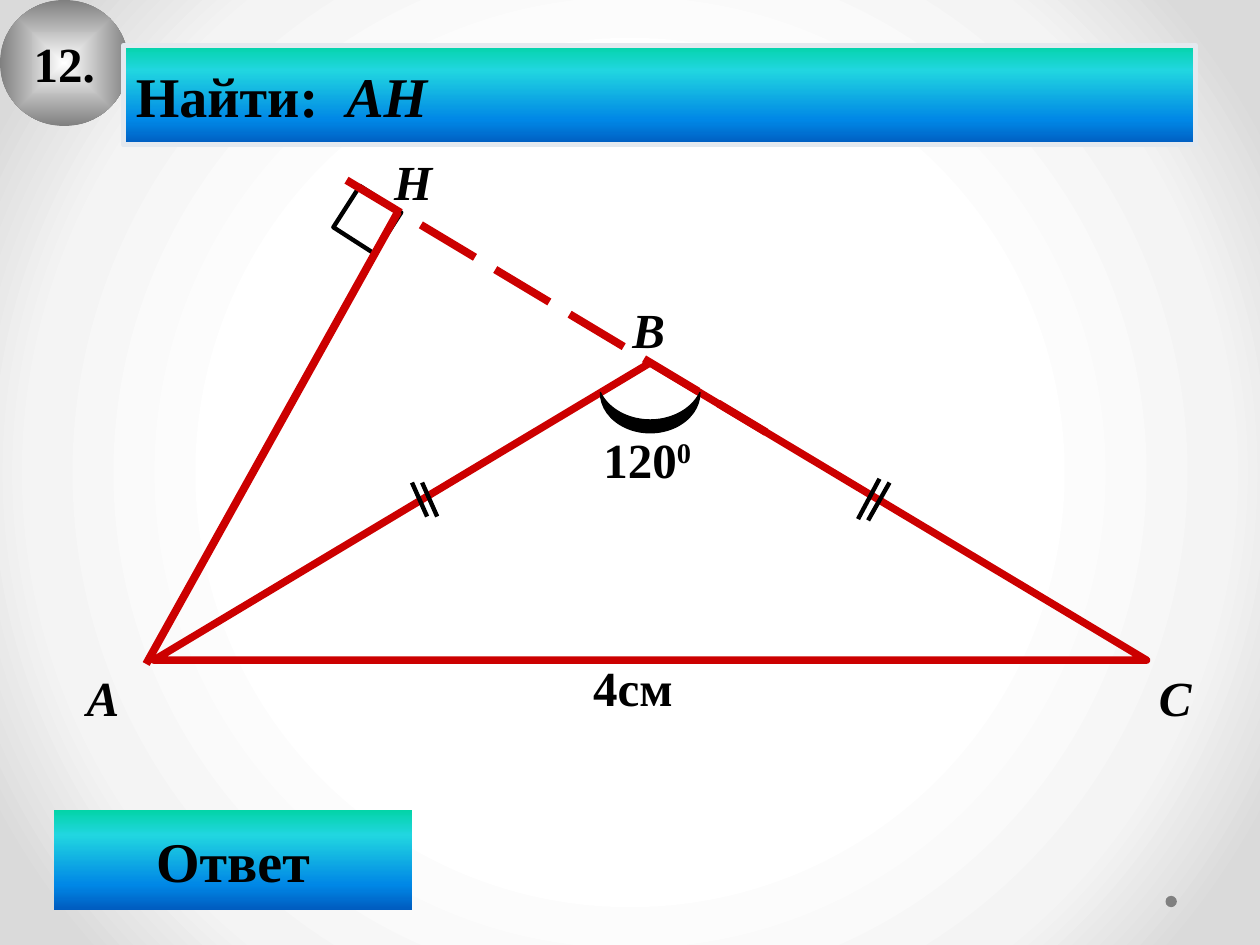
"""Builds a geometry task slide: find the height AH of an isosceles triangle."""
from typing import NamedTuple

from lxml.etree import SubElement
from pptx import Presentation
from pptx.dml.color import RGBColor
from pptx.enum.dml import MSO_LINE
from pptx.enum.shapes import MSO_CONNECTOR, MSO_SHAPE
from pptx.enum.text import MSO_ANCHOR, MSO_AUTO_SIZE, PP_ALIGN
from pptx.oxml.ns import qn
from pptx.util import Inches, Pt

COLORS = {
    "ink": "000000",
    "side": "CC0000",
    "border": "E4E9EF",
    "dot": "808080",
}
OCEAN = ((0, "03D4A8"), (25, "21D6E0"), (75, "0087E6"), (100, "005CBF"))
SILVER = ((0, "FFFFFF"), (100, "808080"))
PAPER = ((50, "FFFFFF"), (76, "F4F4F4"), (92, "DADADA"))
FONT = "Times New Roman"


class Box(NamedTuple):
    left: float
    top: float
    width: float
    height: float


class Piece(NamedTuple):
    text: str
    italic: bool = False
    raised: bool = False


class Label(NamedTuple):
    box: Box
    pieces: tuple[Piece, ...]
    wrap: bool = False


class Segment(NamedTuple):
    start: tuple[float, float]
    end: tuple[float, float]
    color: str = "ink"
    weight: float = 2.5
    dashed: bool = False


LABELS = (
    Label(Box(0.59, 5.25, 0.46, 0.57), (Piece("А", True),)),
    Label(Box(4.92, 2.33, 0.46, 0.57), (Piece("В", True),)),
    Label(Box(9.1, 5.25, 0.46, 0.57), (Piece("С", True),)),
    Label(Box(3.03, 1.15, 0.5, 0.57), (Piece("H", True),)),
    Label(Box(4.61, 5.17, 1.42, 0.57), (Piece("4см"),), True),
    Label(Box(4.69, 3.36, 0.92, 0.57), (Piece("120"), Piece("0", raised=True))),
)
HEIGHT = Segment((3.16, 1.68), (1.16, 5.27), "side", 4.5)
EXTENSION = Segment((2.75, 1.43), (6.08, 3.43), "side", 4.5, True)
TICKS = (
    Segment((3.27, 3.83), (3.39, 4.1)),
    Segment((3.35, 3.83), (3.47, 4.1)),
    Segment((6.98, 3.8), (6.81, 4.12)),
    Segment((7.06, 3.83), (6.89, 4.13)),
)


def rgb(name: str) -> RGBColor:
    """Return the named colour."""
    return RGBColor.from_string(COLORS[name])


def apply_gradient(owner, fill, stops, path: str | None = None) -> None:
    """Fill with gradient stops, running downwards or out from the centre."""
    fill.solid()
    fill.fore_color.rgb = rgb("ink")
    solid = owner.find(".//" + qn("a:solidFill"))
    gradient = solid.makeelement(qn("a:gradFill"), {"rotWithShape": "1"})
    stop_list = SubElement(gradient, qn("a:gsLst"))
    for position, color in stops:
        stop = SubElement(stop_list, qn("a:gs"), pos=str(position * 1000))
        SubElement(stop, qn("a:srgbClr"), val=color)
    if path:
        centre = SubElement(gradient, qn("a:path"), path=path)
        SubElement(centre, qn("a:fillToRect"), dict.fromkeys("ltrb", "50000"))
    else:
        SubElement(gradient, qn("a:lin"), ang="5400000", scaled="1")
    solid.getparent().replace(solid, gradient)


def add_figure(slide, kind, box: Box, line: str | None = None, weight: float = 0, rotation: float = 0):
    """Add an unfilled preset shape with an optional outline."""
    figure = slide.shapes.add_shape(kind, *map(Inches, box))
    figure.shadow.inherit = False
    figure.rotation = rotation
    figure.fill.background()
    if line:
        figure.line.color.rgb = rgb(line)
        figure.line.width = Pt(weight)
    else:
        figure.line.fill.background()
    return figure


def write(frame, pieces, size: int, align=PP_ALIGN.LEFT, wrap: bool = False) -> None:
    """Write one bold paragraph made of the pieces."""
    frame.word_wrap = wrap
    paragraph = frame.paragraphs[0]
    paragraph.alignment = align
    paragraph.font.name = FONT
    paragraph.font.size = Pt(size)
    paragraph.font.bold = True
    paragraph.font.color.rgb = rgb("ink")
    for piece in pieces:
        run = paragraph.add_run()
        run.text = piece.text
        run.font.color.rgb = rgb("ink")
        if piece.italic:
            run.font.italic = True
        if piece.raised:
            run.font._element.set("baseline", "30000")


def add_plate(slide, kind, box, stops, pieces, size, align=PP_ALIGN.CENTER, path=None, line=None) -> None:
    """Add a gradient shape that carries text."""
    plate = add_figure(slide, kind, box, line, 3)
    apply_gradient(plate._element, plate.fill, stops, path)
    plate.text_frame.vertical_anchor = MSO_ANCHOR.MIDDLE
    write(plate.text_frame, pieces, size, align)


def add_label(slide, label: Label) -> None:
    """Add a caption of the drawing."""
    frame = slide.shapes.add_textbox(*map(Inches, label.box)).text_frame
    write(frame, label.pieces, 28, wrap=label.wrap)
    frame.auto_size = MSO_AUTO_SIZE.SHAPE_TO_FIT_TEXT


def add_segment(slide, segment: Segment) -> None:
    """Add a straight line of the drawing."""
    ends = map(Inches, segment.start + segment.end)
    connector = slide.shapes.add_connector(MSO_CONNECTOR.STRAIGHT, *ends)
    connector.line.color.rgb = rgb(segment.color)
    connector.line.width = Pt(segment.weight)
    if segment.dashed:
        connector.line.dash_style = MSO_LINE.LONG_DASH
    SubElement(connector._element.spPr, qn("a:effectLst"))


def add_solid(slide, kind, box: Box, color: str, **outline):
    """Add a preset shape of one colour."""
    figure = add_figure(slide, kind, box, **outline)
    figure.fill.solid()
    figure.fill.fore_color.rgb = rgb(color)
    return figure


def main() -> None:
    """Build and save the slide."""
    presentation = Presentation()
    presentation.slide_width, presentation.slide_height = Inches(10), Inches(7.5)
    slide = presentation.slides.add_slide(presentation.slide_layouts[6])
    apply_gradient(slide._element, slide.background.fill, PAPER, "circle")

    add_solid(slide, MSO_SHAPE.OVAL, Box(9.25, 7.11, 0.09, 0.09), "dot")
    add_plate(slide, MSO_SHAPE.OVAL, Box(0, 0, 1.02, 1), SILVER, (Piece("12."),), 28, path="shape")
    add_plate(slide, MSO_SHAPE.ACTION_BUTTON_CUSTOM, Box(0.43, 6.43, 2.84, 0.79), OCEAN, (Piece("Ответ"),), 32)
    add_figure(slide, MSO_SHAPE.RECTANGLE, Box(2.72, 1.55, 0.39, 0.39), "ink", 2.5, 32.7)
    task = (Piece("Найти:  "), Piece("AH", True))
    add_plate(slide, MSO_SHAPE.RECTANGLE, Box(0.98, 0.36, 8.51, 0.79), OCEAN, task, 32, PP_ALIGN.LEFT, line="border")

    add_segment(slide, HEIGHT)
    add_figure(slide, MSO_SHAPE.ISOSCELES_TRIANGLE, Box(1.22, 2.88, 7.88, 2.36), "side", 4.25)
    for segment in (*TICKS, EXTENSION):
        add_segment(slide, segment)
    for label in LABELS:
        add_label(slide, label)
    angle = add_solid(slide, MSO_SHAPE.MOON, Box(5, 2.88, 0.32, 0.79), "ink", line="ink", weight=0.75, rotation=270)
    angle.adjustments[0] = 0.32
    presentation.save("out.pptx")


if __name__ == "__main__":
    main()
